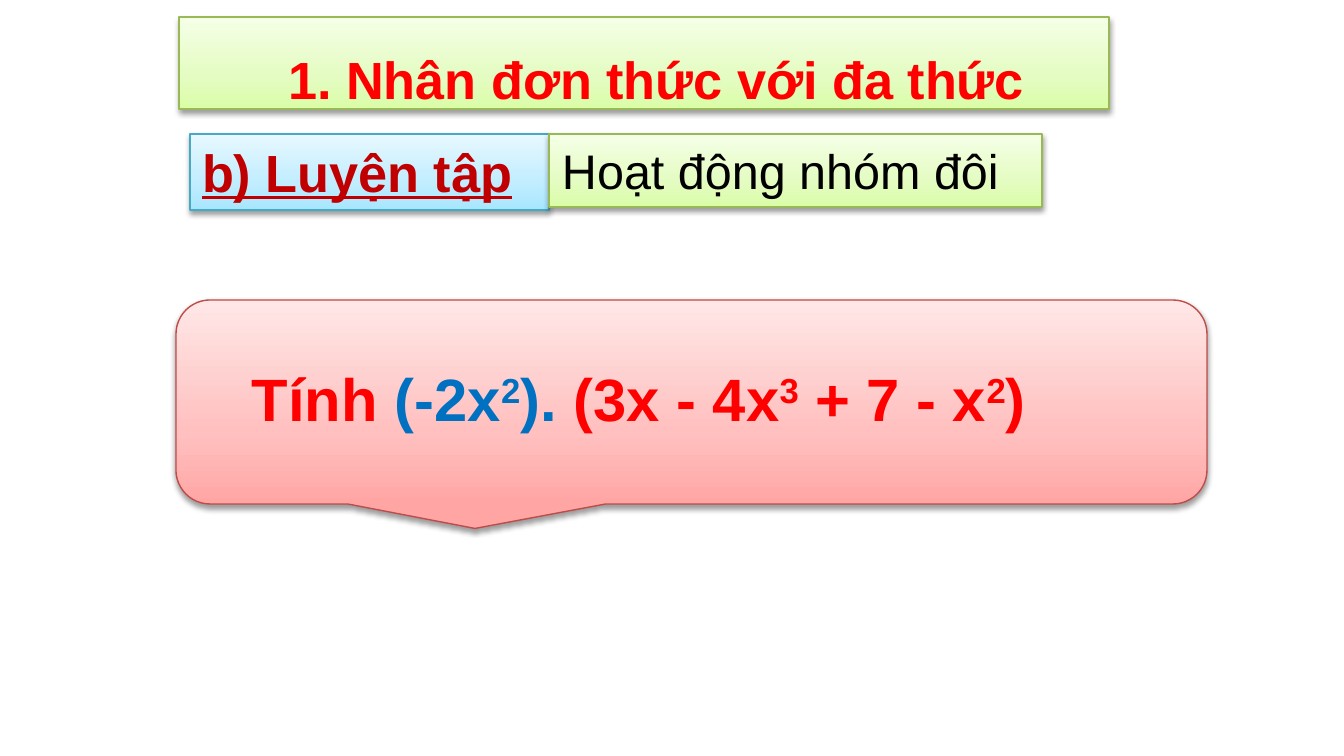
from copy import deepcopy

from lxml import etree
from pptx import Presentation
from pptx.dml.color import RGBColor
from pptx.enum.shapes import MSO_SHAPE
from pptx.enum.text import MSO_ANCHOR, MSO_AUTO_SIZE, PP_ALIGN
from pptx.oxml.ns import qn
from pptx.util import Inches, Pt

RECTANGLE = MSO_SHAPE.RECTANGLE
CALLOUT = MSO_SHAPE.ROUNDED_RECTANGULAR_CALLOUT
TOP = MSO_ANCHOR.TOP
NO_AUTOSIZE = MSO_AUTO_SIZE.NONE
LEFT = PP_ALIGN.LEFT
CENTER = PP_ALIGN.CENTER

WIDTH, HEIGHT = 1344, 756
SCALE = Inches(10) / WIDTH
FONT = "Arial"
COLORS = {
    "red": "FF0000",
    "dark_red": "C00000",
    "blue": "0070C0",
    "black": "000000",
    "green_line": "98B955",
    "cyan_line": "46AAC5",
    "pink_line": "BF4C48",
}
GRADIENTS = {
    "green": ("DAFDA7", "E4FCC2", "F5FFE7"),
    "cyan": ("A7E6FF", "C1EDFF", "E7F8FF"),
    "pink": ("FFA6A5", "FFC0BF", "FFE7E7"),
}
STOP_POSITIONS = (0, 0.35, 1)


def px(value):
    return round(value * SCALE)


def color(name):
    return RGBColor.from_string(COLORS[name])


def add_gradient(shape, name):
    shape.fill.gradient()
    shape.fill.gradient_angle = 90
    stop_list = shape.element.spPr.find(".//" + qn("a:gsLst"))
    stop_list.append(deepcopy(stop_list[-1]))
    stops = zip(shape.fill.gradient_stops, GRADIENTS[name], STOP_POSITIONS)
    for stop, hex_color, position in stops:
        stop.color.rgb = RGBColor.from_string(hex_color)
        stop.position = position


def add_shadow(shape):
    shape.shadow.inherit = False
    effects = shape.element.spPr.find(qn("a:effectLst"))
    shadow = etree.SubElement(effects, qn("a:outerShdw"), blurRad=str(Pt(3.1)),
                              dist=str(Pt(1.6)), dir="5400000", rotWithShape="0")
    shade = etree.SubElement(shadow, qn("a:srgbClr"), val=COLORS["black"])
    etree.SubElement(shade, qn("a:alpha"), val="38000")


def add_panel(slide, kind, box, theme):
    shape = slide.shapes.add_shape(kind, *map(px, box))
    add_gradient(shape, theme)
    shape.line.color.rgb = color(theme + "_line")
    shape.line.width = Pt(0.75)
    add_shadow(shape)
    return shape


def add_run(paragraph, text, size=28, tint="red", bold=True, underline=False,
            superscript=False):
    run = paragraph.add_run()
    run.text = text
    font = run.font
    font.name = FONT
    font.size = Pt(size)
    font.bold = bold
    font.underline = underline
    font.color.rgb = color(tint)
    if superscript:
        run.font._element.set("baseline", "30000")


def prepare_text(shape, horizontal=12, vertical=6, alignment=LEFT, wrap=True):
    frame = shape.text_frame
    frame.auto_size = NO_AUTOSIZE
    frame.word_wrap = wrap
    frame.vertical_anchor = TOP
    frame.margin_left = frame.margin_right = px(horizontal)
    frame.margin_top = frame.margin_bottom = px(vertical)
    paragraph = frame.paragraphs[0]
    paragraph.alignment = alignment
    return paragraph


def add_title(slide):
    add_panel(slide, RECTANGLE, (179, 17, 930, 92), "green")
    title = slide.shapes.title
    title.left, title.top, title.width, title.height = map(px, (191, 13, 930, 102))
    slide.shapes._spTree.append(title.element)
    paragraph = prepare_text(title, 7, 3, CENTER)
    paragraph.line_spacing = 1.5
    add_run(paragraph, "1. Nhân đơn thức với đa thức")


def add_exercise(slide):
    box = slide.shapes.add_textbox(*map(px, (240, 356, 830, 85)))
    paragraph = prepare_text(box, wrap=False)
    pieces = (
        ("Tính ", "red", False),
        ("(-2x", "blue", False),
        ("2", "blue", True),
        ("). ", "blue", False),
        ("(3x - 4x", "red", False),
        ("3", "red", True),
        (" + 7 - x", "red", False),
        ("2", "red", True),
        (")", "red", False),
    )
    for text, tint, superscript in pieces:
        add_run(paragraph, text, size=32, tint=tint, superscript=superscript)


def main():
    presentation = Presentation()
    presentation.slide_width = px(WIDTH)
    presentation.slide_height = px(HEIGHT)
    slide = presentation.slides.add_slide(presentation.slide_layouts[5])

    callout = add_panel(slide, CALLOUT, (176, 300, 1031, 204), "pink")
    callout.adjustments[0] = -0.21
    callout.adjustments[1] = 0.62
    add_title(slide)
    section = add_panel(slide, RECTANGLE, (190, 134, 359, 76), "cyan")
    add_run(prepare_text(section), "b) Luyện tập", tint="dark_red", underline=True)
    add_exercise(slide)
    activity = add_panel(slide, RECTANGLE, (549, 134, 493, 73), "green")
    add_run(prepare_text(activity, 13, 7), "Hoạt động nhóm đôi", size=26,
            tint="black", bold=False)

    presentation.save("out.pptx")


if __name__ == "__main__":
    main()
